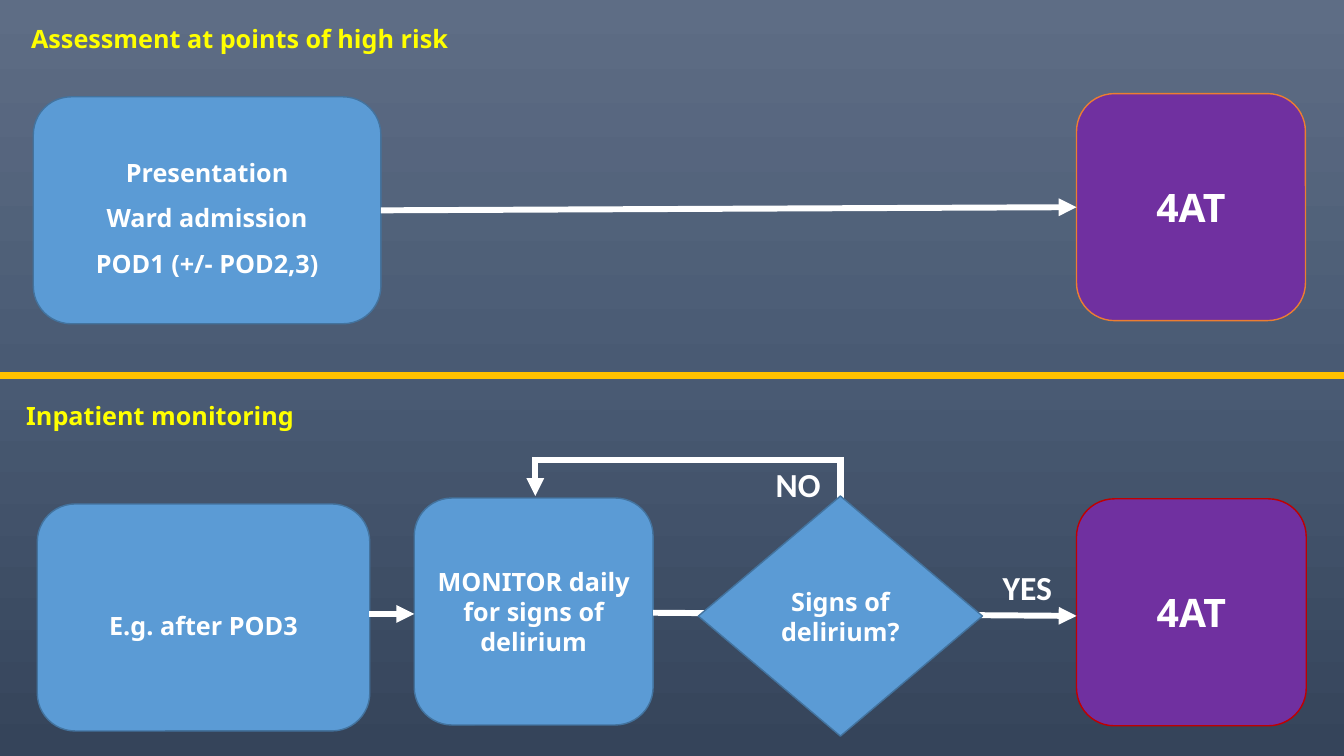
import copy

import pptx
import pptx.dml.color
import pptx.enum.shapes
import pptx.enum.text
import pptx.oxml
import pptx.oxml.ns
import pptx.util

Cm = pptx.util.Cm
Pt = pptx.util.Pt
RGBColor = pptx.dml.color.RGBColor
SHAPE = pptx.enum.shapes.MSO_SHAPE
ALIGN = pptx.enum.text.PP_ALIGN
ANCHOR = pptx.enum.text.MSO_ANCHOR
AUTO_SIZE = pptx.enum.text.MSO_AUTO_SIZE
qn = pptx.oxml.ns.qn

WHITE = RGBColor(0xFF, 0xFF, 0xFF)
YELLOW = RGBColor(0xFF, 0xFF, 0x00)
GOLD = RGBColor(0xFF, 0xC0, 0x00)
BLUE = RGBColor(0x5B, 0x9B, 0xD5)
BLUE_EDGE = RGBColor(0x43, 0x73, 0x9E)
PURPLE = RGBColor(0x70, 0x30, 0xA0)
ORANGE = RGBColor(0xED, 0x7D, 0x31)
RED = RGBColor(0xC0, 0x00, 0x00)
SKY = [RGBColor(0x5E, 0x6D, 0x85), RGBColor(0x49, 0x5A, 0x73), RGBColor(0x35, 0x44, 0x5A)]

BOX_HEIGHT = 5.72
OUTCOME_LEFT = 27.13
LINE_WIDTH = 4.25

STEP_FONT = {"name": "Noto Sans", "size": Pt(18), "bold": True}
OUTCOME_FONT = {**STEP_FONT, "size": Pt(28)}
ANSWER_FONT = {"name": "Calibri", "size": Pt(24), "bold": True}


def set_background(s):
    fill = s.background.fill
    fill.gradient()
    fill.gradient_angle = 270
    stops = s.element.find(".//" + qn("a:gsLst"))
    stops.insert(1, copy.deepcopy(stops[0]))
    for i, (stop, color) in enumerate(zip(fill.gradient_stops, SKY)):
        stop.color.rgb = color
        stop.position = i / 2


def write(tf, lines, font, color, align=ALIGN.LEFT, spacing=None):
    for i, line in enumerate(lines):
        p = tf.paragraphs[0] if i == 0 else tf.add_paragraph()
        p.alignment = align
        if spacing:
            p.line_spacing = spacing
        r = p.add_run()
        r.text = line
        for name, value in font.items():
            setattr(r.font, name, value)
        r.font.color.rgb = color


def add_box(s, at, lines, font=STEP_FONT, fill=BLUE, edge=BLUE_EDGE,
            kind=SHAPE.ROUNDED_RECTANGLE, spacing=None):
    sp = s.shapes.add_shape(kind, *map(Cm, at))
    sp.shadow.inherit = False
    sp.fill.solid()
    sp.fill.fore_color.rgb = fill
    sp.line.color.rgb = edge
    sp.line.width = Pt(1)
    sp.text_frame.vertical_anchor = ANCHOR.MIDDLE
    write(sp.text_frame, lines, font, WHITE, ALIGN.CENTER, spacing)
    return sp


def add_line(s, start, end, color=WHITE, width=LINE_WIDTH, arrow=False):
    line = s.shapes.add_connector(pptx.enum.shapes.MSO_CONNECTOR.STRAIGHT,
                                  *map(Cm, start + end))
    line.line.color.rgb = color
    line.line.width = Pt(width)
    if arrow:
        tail = pptx.oxml.parse_xml(
            '<a:tailEnd %s type="triangle"/>' % pptx.oxml.ns.nsdecls("a"))
        line.line._get_or_add_ln().append(tail)
    effects = pptx.oxml.parse_xml("<a:effectLst %s/>" % pptx.oxml.ns.nsdecls("a"))
    line.element.spPr.append(effects)
    return line


def add_label(s, at, text, font, color, wrap):
    sp = s.shapes.add_textbox(*map(Cm, at))
    tf = sp.text_frame
    tf.word_wrap = wrap
    tf.auto_size = AUTO_SIZE.SHAPE_TO_FIT_TEXT
    write(tf, [text], font, color)


def set_title(s, at, text):
    title = s.shapes.title
    for name, value in zip(("left", "top", "width", "height"), at):
        setattr(title, name, Cm(value))
    tf = title.text_frame
    tf.word_wrap = True
    tf.auto_size = AUTO_SIZE.NONE
    tf.vertical_anchor = ANCHOR.TOP
    write(tf, [text], STEP_FONT, YELLOW)


def add_risk_assessment(s):
    set_title(s, (0.53, 0.46, 12.9, 1.02), "Assessment at points of high risk")
    points = add_box(s, (0.84, 2.44, 8.76, BOX_HEIGHT),
                     ["Presentation", "Ward admission", "POD1 (+/- POD2,3)"], spacing=1.5)
    outcome = add_box(s, (OUTCOME_LEFT, 2.36, 5.77, BOX_HEIGHT), ["4AT"],
                      OUTCOME_FONT, PURPLE, ORANGE)
    arrow = add_line(s, (9.6, 5.3), (OUTCOME_LEFT, 5.22), arrow=True)
    arrow.begin_connect(points, 3)
    arrow.end_connect(outcome, 1)


def add_monitoring(s):
    add_label(s, (0.41, 9.96, 9.17, 1.02), "Inpatient monitoring", STEP_FONT, YELLOW, True)

    # Steps and outcome
    add_box(s, (0.94, 12.7, 8.38, BOX_HEIGHT), ["E.g. after POD3"], spacing=1.5)
    add_box(s, (OUTCOME_LEFT, 12.57, 5.79, BOX_HEIGHT), ["4AT"], OUTCOME_FONT, PURPLE, RED)
    add_box(s, (10.44, 12.55, 6.02, BOX_HEIGHT), ["MONITOR daily for signs of delirium"])

    # Forward arrows; the second runs behind the decision
    add_line(s, (9.3, 15.47), (10.44, 15.47), arrow=True)
    add_line(s, (16.46, 15.44), (OUTCOME_LEFT, 15.52), arrow=True)

    # Loop back to daily monitoring
    add_line(s, (13.49, 11.51), (13.49, 12.5), arrow=True)
    add_line(s, (21.18, 11.58), (13.46, 11.58))
    add_line(s, (21.18, 11.51), (21.18, 13.03), width=4.5)

    # Decision and its answers
    add_box(s, (17.6, 12.5, 7.16, 6.05), ["Signs of delirium?"], kind=SHAPE.FLOWCHART_DECISION)
    add_label(s, (25.02, 14.17, 1.78, 1.27), "YES", ANSWER_FONT, WHITE, False)
    add_label(s, (19.3, 11.56, 1.65, 1.27), "NO", ANSWER_FONT, WHITE, False)


def main():
    prs = pptx.Presentation()
    prs.slide_width, prs.slide_height = Cm(33.87), Cm(19.05)
    s = prs.slides.add_slide(prs.slide_layouts[5])
    set_background(s)
    add_line(s, (-0.05, 9.47), (33.87, 9.47), GOLD, 5)
    add_risk_assessment(s)
    add_monitoring(s)
    prs.save("out.pptx")


if __name__ == "__main__":
    main()
